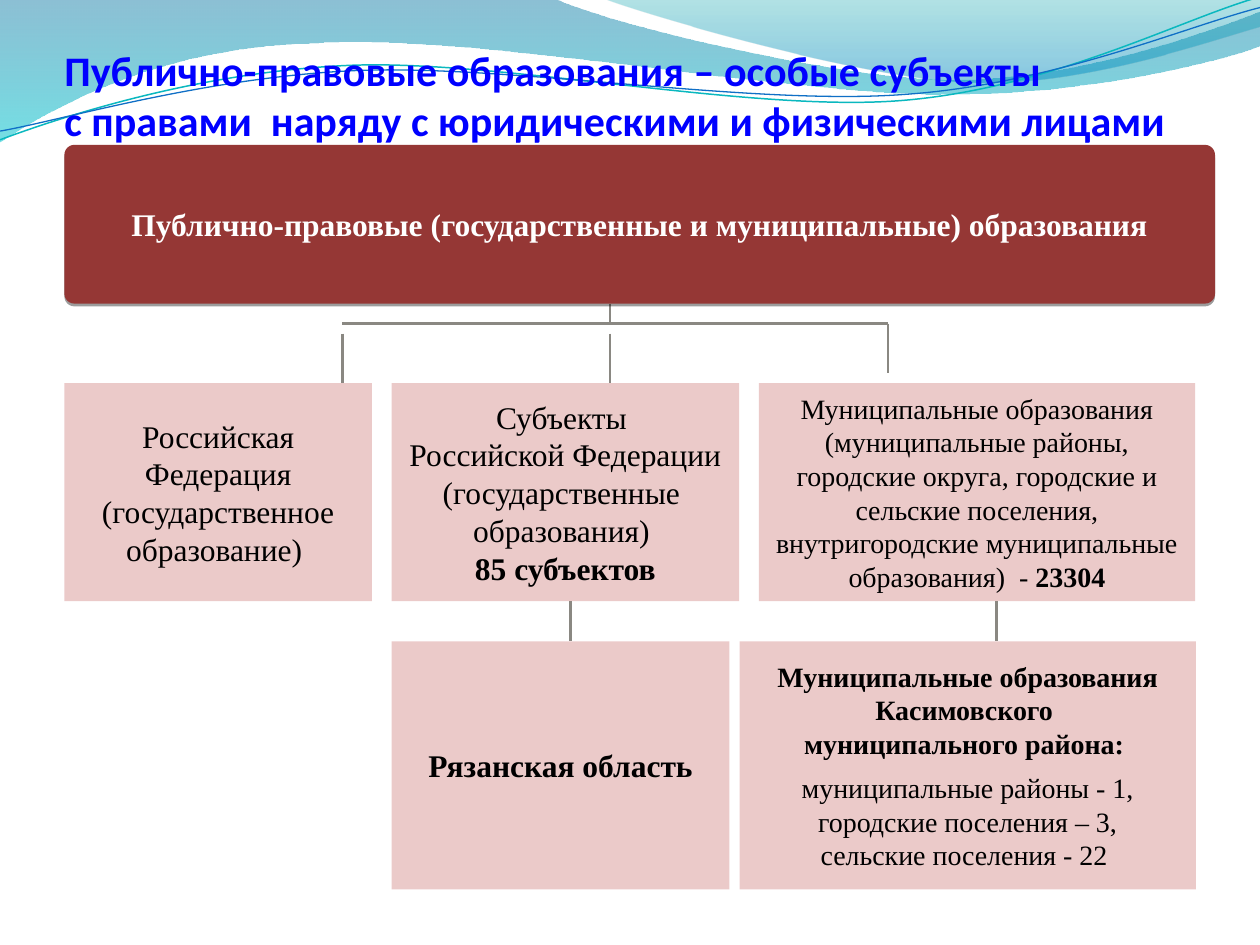
import dataclasses
import lxml.etree
import pptx
import pptx.dml.color
import pptx.enum.shapes
import pptx.enum.text
import pptx.oxml.ns
import pptx.util

Pt = pptx.util.Pt
qn = pptx.oxml.ns.qn
SHAPE = pptx.enum.shapes.MSO_SHAPE
ALIGN = pptx.enum.text.PP_ALIGN
ANCHOR = pptx.enum.text.MSO_ANCHOR


@dataclasses.dataclass(frozen=True)
class Theme:
    """Colours, fonts and type sizes of the slide."""
    title: str = "0000FF"
    header: str = "953735"
    box: str = "D99694"
    line: str = "8A8882"
    ink: str = "000000"
    paper: str = "FFFFFF"
    wave: tuple = (("0074A1", 0, 45), ("00C6CF", 1, 55))
    crest: tuple = (("00A1A9", 0, 30), ("008BBF", 0.8, 45))
    teal: str = "0AB8BF"
    blue: str = "0F6FC6"
    head_font: str = "Calibri"
    body_font: str = "Times New Roman"
    title_size: int = 24
    large: int = 18
    small: int = 16


T = Theme()


def rgb(value):
    """Turn a hex string into a colour."""
    return pptx.dml.color.RGBColor.from_string(value)


def set_alpha(element, percents):
    """Give each colour inside an element its opacity."""
    for clr, pct in zip(element.iter(qn("a:srgbClr")), percents):
        lxml.etree.SubElement(clr, qn("a:alpha"), val=str(pct * 1000))


def add_text(p, text, size=T.large, bold=False, color=T.ink, font=T.body_font):
    """Add one formatted run to a paragraph."""
    r = p.add_run()
    r.text = text
    r.font.size, r.font.bold, r.font.name = Pt(size), bold, font
    r.font.color.rgb = rgb(color)


def add_curve(s, start, segments, close=False):
    """Draw an outline of straight segments and cubic curves."""
    points = [(Pt(seg[i]), Pt(seg[i + 1]))
              for seg in segments for i in range(0, len(seg), 2)]
    fb = s.shapes.build_freeform(Pt(start[0]), Pt(start[1]))
    fb.add_line_segments(points, close=close)
    sp = fb.convert_to_shape()
    sp.shadow.inherit = False
    steps = iter(list(sp.element.spPr.iter(qn("a:lnTo"))))
    for seg in segments:
        first = next(steps)
        if len(seg) == 6:
            first.tag = qn("a:cubicBezTo")
            for step in (next(steps), next(steps)):
                first.append(step[0])
                step.getparent().remove(step)
    return sp


def add_waves(s, x, y, w):
    """Draw the two tinted waves and two thin curves across the top."""
    right = x + w
    bands = (
        (T.wave, (x, y), [
            (x + 317, y - 0.7),
            (x + 342.7, y + 12.2, x + 478.1, y + 45.4, x + 545.8, y + 45.4),
            (x + 614.2, y + 45.4, x + 689.8, y + 18.7, right, y + 6.5),
            (right + 0.7, y + 25.9),
            (x + 707.8, y + 31.7, x + 626.4, y + 54.7, x + 537.1, y + 54),
            (x + 447.8, y + 54, x + 275, y + 20.2, x + 185, y + 24.5),
            (x + 92.9, y + 25.9, x + 33.1, y + 59.8, x - 0.7, y + 81.4)]),
        (T.crest, (x + 344.9, y - 0.7), [
            (x + 366.5, y + 7.9, x + 491, y + 44.6, x + 553.7, y + 46.8),
            (x + 616.3, y + 49.7, x + 691.9, y + 23, right, y + 15.1),
            (right, y)]))
    for stops, start, segments in bands:
        sp = add_curve(s, start, segments, close=True)
        sp.line.fill.background()
        sp.fill.gradient()
        sp.fill.gradient_angle = 270
        for stop, (color, position, _) in zip(sp.fill.gradient_stops, stops):
            stop.color.rgb, stop.position = rgb(color), position
        set_alpha(sp.element.spPr, [pct for _, _, pct in stops])
    threads = (
        (T.teal, 0.85, (x, y + 79.9), [
            (x + 34.6, y + 67, x + 113.8, y + 41, x + 199.4, y + 37.4),
            (x + 284.4, y + 33.8, x + 427, y + 64.1, x + 513.4, y + 57.6),
            (x + 599.8, y + 51.1, x + 675.4, y + 10.8, right - 1.4, y - 1.4)]),
        (T.blue, 0.75, (x, y + 74.9), [
            (x + 33.8, y + 69.1, x + 118.1, y + 43.9, x + 203.8, y + 40.3),
            (x + 290.2, y + 36.7, x + 429.8, y + 60.5, x + 516.2, y + 54),
            (x + 601.9, y + 48.2, x + 677.5, y + 15.1, right, y + 4.3)]))
    for color, width, start, segments in threads:
        sp = add_curve(s, start, segments)
        sp.fill.background()
        sp.line.color.rgb, sp.line.width = rgb(color), Pt(width)


def add_title(s, x, y, w, h):
    """Place and format the title above the waves."""
    sp = s.shapes.title
    s.shapes.element.append(sp.element)
    sp.left, sp.top, sp.width, sp.height = Pt(x), Pt(y), Pt(w), Pt(h)
    tf = sp.text_frame
    tf.word_wrap, tf.vertical_anchor = True, ANCHOR.BOTTOM
    tf.auto_size = pptx.enum.text.MSO_AUTO_SIZE.NONE
    tf.margin_left = tf.margin_right = tf.margin_bottom = 0
    tf.margin_top = Pt(3.6)
    p = tf.paragraphs[0]
    p.alignment = ALIGN.LEFT
    fmt = {"size": T.title_size, "bold": True, "color": T.title, "font": T.head_font}
    add_text(p, "Публично-правовые образования – особые субъекты ", **fmt)
    p.add_line_break()
    add_text(p, "с правами  наряду с юридическими и физическими лицами", **fmt)


def add_box(s, x, y, w, h, paragraphs, fill=T.box, corner=0, gap_before=None, **fmt):
    """Add a filled box whose paragraphs are lists of (text, bold) runs."""
    sp = s.shapes.add_shape(SHAPE.ROUNDED_RECTANGLE, Pt(x), Pt(y), Pt(w), Pt(h))
    sp.adjustments[0] = corner
    sp.shadow.inherit = False
    sp.fill.solid()
    sp.fill.fore_color.rgb = rgb(fill)
    sp.line.fill.background()
    tf = sp.text_frame
    tf.word_wrap, tf.vertical_anchor = True, ANCHOR.MIDDLE
    for i, runs in enumerate(paragraphs):
        p = tf.add_paragraph() if i else tf.paragraphs[0]
        p.alignment = ALIGN.CENTER
        if i == gap_before:
            p.space_before = Pt(6)
        for text, bold in runs:
            add_text(p, text, bold=bold, **fmt)
    return sp


def add_header(s, x, y, w, h):
    """Add the dark root box with its shadow."""
    sp = add_box(s, x, y, w, h, [[(
        "Публично-правовые (государственные и муниципальные) образования", True)]],
        fill=T.header, corner=0.063, color=T.paper)
    effects = sp.element.spPr.find(qn("a:effectLst"))
    shadow = lxml.etree.SubElement(effects, qn("a:outerShdw"), blurRad="0",
                                   dist=str(Pt(1.6)), dir="5400000", rotWithShape="0")
    lxml.etree.SubElement(shadow, qn("a:srgbClr"), val=T.ink)
    set_alpha(shadow, [38])


def add_row(s, x, y, h, gap, boxes):
    """Lay half-transparent boxes from left to right with an equal gap."""
    for w, paragraphs, fmt in boxes:
        sp = add_box(s, x, y, w, h, paragraphs, **fmt)
        set_alpha(sp.element.spPr, [50])
        x += w + gap


def add_links(s, x, top, row1, row1_end, row2):
    """Join the root box, the first row and the second row with lines."""
    left, middle, right = x + 158.8, x + 311.8, x + 470.7
    bar, drop = top + 11.5, top + 17.1
    for x1, y1, x2, y2 in (
            (middle, top, middle, bar), (left, bar, right, bar),
            (left, drop, left, row1), (middle, drop, middle, row1),
            (right, bar, right, row1 - 5.6),
            (x + 289.2, row1_end, x + 289.2, row2),
            (x + 532.8, row1_end, x + 532.8, row2)):
        c = s.shapes.add_connector(pptx.enum.shapes.MSO_CONNECTOR.STRAIGHT,
                                   Pt(x1), Pt(y1), Pt(x2), Pt(y2))
        c.line.color.rgb, c.line.width = rgb(T.line), Pt(1.5)
        lxml.etree.SubElement(c.element.spPr, qn("a:effectLst"))


def main():
    """Build the slide and save it."""
    prs = pptx.Presentation()
    prs.slide_width, prs.slide_height = Pt(720), Pt(540)
    s = prs.slides.add_slide(prs.slide_layouts[5])
    x, small = 36.8, {"size": T.small}
    add_waves(s, 0, 0, 720)
    add_title(s, x, 26, 648, 56.8)
    add_links(s, x, 173.5, 219, 343.5, 366.5)
    add_header(s, x, 82.8, 657.5, 90.7)
    add_row(s, x, 219, 124.5, 11.2, (
        (175.8, [[("Российская Федерация (государственное образование) ", False)]], {}),
        (198.6, [[("Субъекты ", False)],
                 [("Российской Федерации (государственные  образования) ", False)],
                 [("85 субъектов", True)]], {}),
        (249.3, [[("Муниципальные образования (муниципальные районы, городские "
                   "округа, городские и сельские поселения, внутригородские "
                   "муниципальные образования)  - ", False), ("23304", True)]], small)))
    add_row(s, x + 187, 366.5, 141.7, 5.8, (
        (193, [[("Рязанская область", True)]], {}),
        (260.7, [[("Муниципальные образования Касимовского ", True)],
                 [("муниципального района: ", True)],
                 [("муниципальные районы - 1, городские поселения – 3,", False)],
                 [("сельские поселения - 22 ", False)]],
         {"gap_before": 2, **small})))
    prs.save("out.pptx")


if __name__ == "__main__":
    main()
